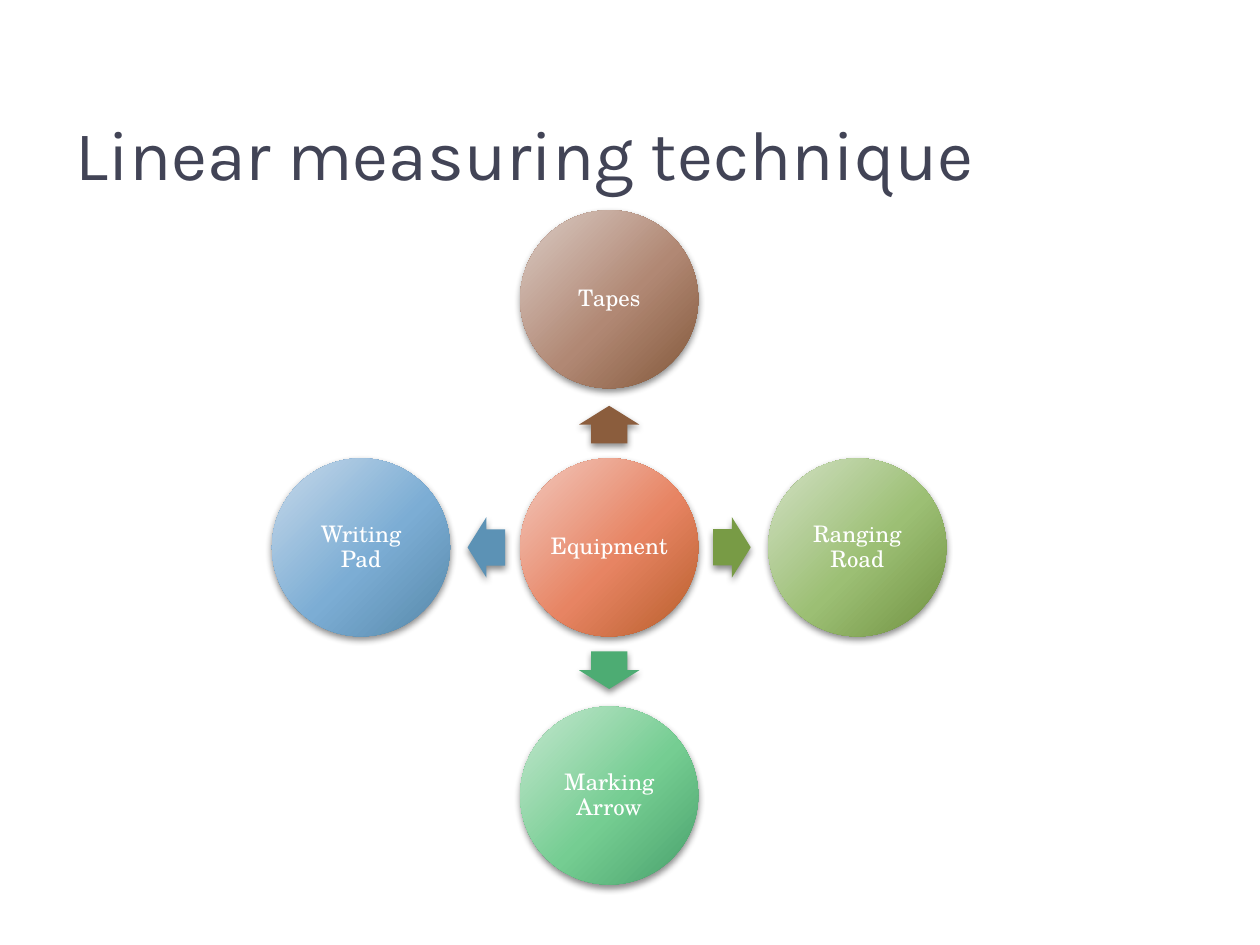
import math
from dataclasses import dataclass

import pptx
import pptx.dml.color
import pptx.enum.shapes
import pptx.enum.text
import pptx.oxml
import pptx.oxml.ns
import pptx.util

Pt = pptx.util.Pt
qn = pptx.oxml.ns.qn
MSO_SHAPE = pptx.enum.shapes.MSO_SHAPE
MSO_ANCHOR = pptx.enum.text.MSO_ANCHOR
PP_ALIGN = pptx.enum.text.PP_ALIGN

HUB_X, HUB_Y = 348.1, 312.8
DIAMETER = 101.8
SPOKE = 141.8
ARROW_REACH = 70.2
ARROW_W, ARROW_H = 21.5, 34.5


@dataclass
class Circle:
    label: str
    light: str
    middle: str
    dark: str


@dataclass
class Spoke:
    angle: int
    arrow_color: str
    circle: Circle


HUB = Circle("Equipment", "F2C9BF", "E78463", "B75E2A")
SPOKES = [
    Spoke(270, "8B5D3D", Circle("Tapes", "DBCCC6", "B18874", "825739")),
    Spoke(0, "789B45", Circle("Ranging Road", "D3E1C6", "9CBF74", "709140")),
    Spoke(90, "4DAC73", Circle("Marking Arrow", "C5E7CF", "75CD92", "48A06B")),
    Spoke(180, "5C92B5", Circle("Writing Pad", "C7D9EA", "7CADD4", "5688A9")),
]


def rgb(color: str) -> pptx.dml.color.RGBColor:
    return pptx.dml.color.RGBColor.from_string(color)


def style_font(p, name: str, size: float, color: str) -> None:
    p.font.name = name
    p.font.size = Pt(size)
    p.font.color.rgb = rgb(color)


def from_hub(angle: int, distance: float) -> tuple[float, float]:
    """Return the point at a distance from the hub, clockwise from the right."""
    turn = math.radians(angle)
    return HUB_X + distance * math.cos(turn), HUB_Y + distance * math.sin(turn)


def add_centred(slide, kind, x: float, y: float, w: float, h: float):
    """Add a borderless shape with a soft shadow, centred on a point."""
    sp = slide.shapes.add_shape(kind, Pt(x - w / 2), Pt(y - h / 2), Pt(w), Pt(h))
    sp.line.fill.background()
    sp.shadow.inherit = False
    effects = sp._element.spPr.find(qn("a:effectLst"))
    effects.append(pptx.oxml.parse_xml(
        f'<a:outerShdw {pptx.oxml.ns.nsdecls("a")} blurRad="{Pt(4)}" dist="{Pt(2)}"'
        ' dir="5400000" rotWithShape="0"><a:srgbClr val="000000">'
        '<a:alpha val="45000"/></a:srgbClr></a:outerShdw>'))
    return sp


def fill_radial(sp, circle: Circle) -> None:
    sp.fill.gradient()
    stops = "".join(
        f'<a:gs pos="{pos}"><a:srgbClr val="{color}"/></a:gs>'
        for pos, color in ((0, circle.light), (55000, circle.middle), (100000, circle.dark)))
    gradient = pptx.oxml.parse_xml(
        f'<a:gradFill {pptx.oxml.ns.nsdecls("a")} rotWithShape="1"><a:gsLst>{stops}</a:gsLst>'
        '<a:path path="circle"><a:fillToRect l="-40000" t="-90000" r="140000" b="190000"/>'
        '</a:path></a:gradFill>')
    spPr = sp._element.spPr
    spPr.replace(spPr.find(qn("a:gradFill")), gradient)


def add_circle(slide, circle: Circle, x: float, y: float) -> None:
    sp = add_centred(slide, MSO_SHAPE.OVAL, x, y, DIAMETER, DIAMETER)
    fill_radial(sp, circle)
    tf = sp.text_frame
    tf.word_wrap = True
    tf.vertical_anchor = MSO_ANCHOR.MIDDLE
    tf.margin_left = tf.margin_right = tf.margin_top = tf.margin_bottom = Pt(1.3)
    p = tf.paragraphs[0]
    p.text = circle.label
    p.alignment = PP_ALIGN.CENTER
    p.line_spacing = 0.9
    style_font(p, "TeX Gyre Schola", 13, "FFFFFF")


def add_arrow(slide, spoke: Spoke) -> None:
    x, y = from_hub(spoke.angle, ARROW_REACH)
    sp = add_centred(slide, MSO_SHAPE.RIGHT_ARROW, x, y, ARROW_W, ARROW_H)
    sp.adjustments[0] = 0.6
    sp.adjustments[1] = 0.5
    sp.rotation = spoke.angle
    sp.fill.solid()
    sp.fill.fore_color.rgb = rgb(spoke.arrow_color)


def add_title(slide, text: str) -> None:
    sp = slide.shapes.title
    sp.left, sp.top, sp.width, sp.height = Pt(36), Pt(54), Pt(648), Pt(66)
    tf = sp.text_frame
    tf.vertical_anchor = MSO_ANCHOR.MIDDLE
    p = tf.paragraphs[0]
    p.text = text
    p.alignment = PP_ALIGN.LEFT
    style_font(p, "Karla", 40, "424456")


def main() -> None:
    prs = pptx.Presentation()
    prs.slide_width, prs.slide_height = Pt(720), Pt(540)
    slide = prs.slides.add_slide(prs.slide_layouts.get_by_name("Title Only"))
    add_title(slide, "Linear measuring technique")
    add_circle(slide, HUB, HUB_X, HUB_Y)
    for spoke in SPOKES:
        add_arrow(slide, spoke)
        add_circle(slide, spoke.circle, *from_hub(spoke.angle, SPOKE))
    prs.save("out.pptx")


if __name__ == "__main__":
    main()
